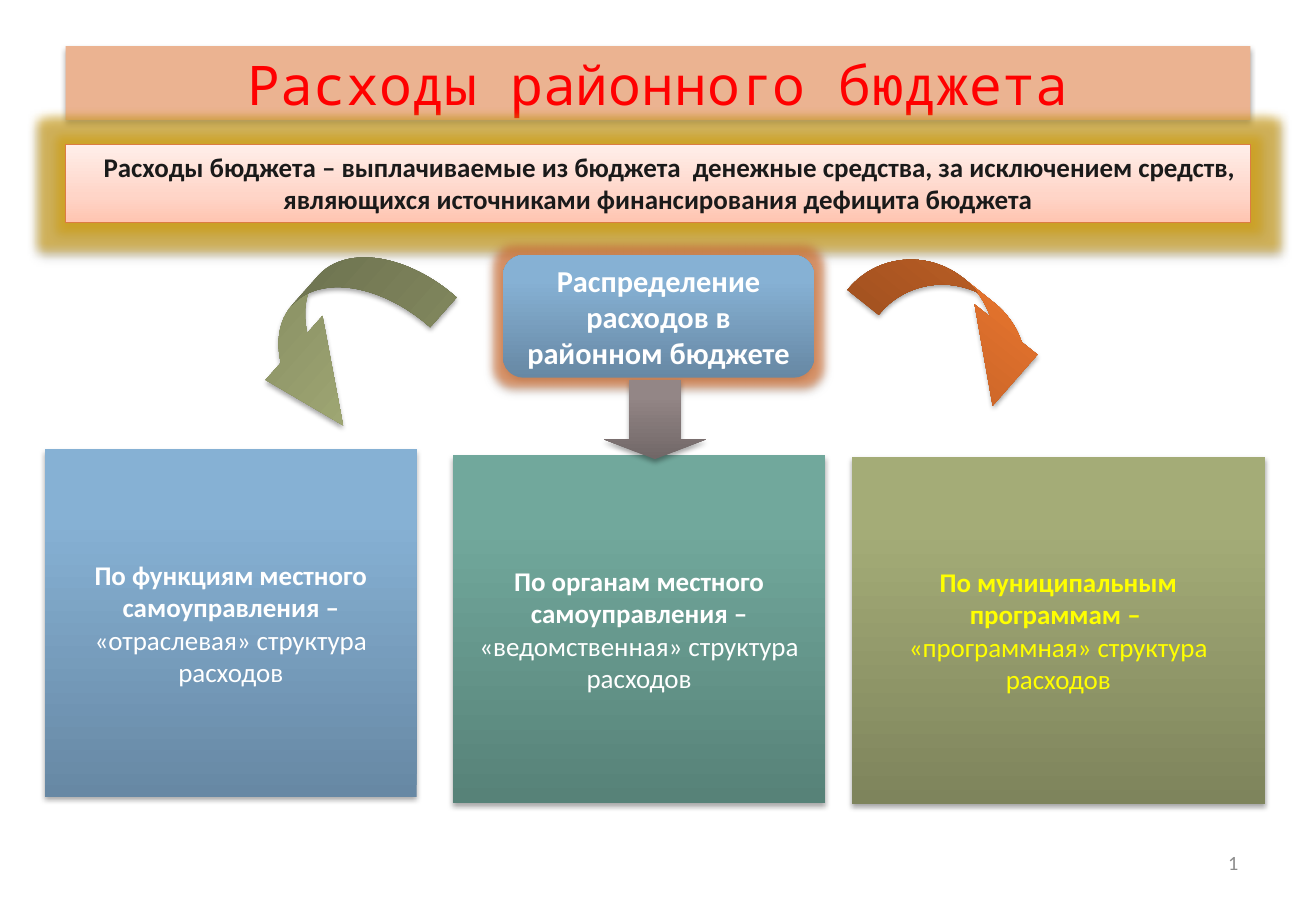
from lxml import etree
from pptx import Presentation
from pptx import util as u
from pptx.dml.color import RGBColor
from pptx.enum import shapes, text
from pptx.oxml.ns import qn

PX = 9144
KIND = shapes.MSO_SHAPE
ALIGN = text.PP_ALIGN
ANCHOR = text.MSO_ANCHOR
BLUE = [(0, "6788A4"), (80, "86B1D4"), (100, "86B2D7")]
TEAL = [(0, "578278"), (80, "71A89C"), (100, "70AA9D")]
OLIVE = [(0, "7E845C"), (80, "A4AC77"), (100, "A6AE76")]
ORANGE = [(0, "B65B24"), (80, "EC772F"), (100, "F1762C")]
GREY = [(0, "716767"), (80, "938686"), (100, "948787")]
PINK = [(0, "FFC5B1"), (35, "FFD5C8"), (100, "FFEFEA")]


def rgb(color):
    return RGBColor.from_string(color)


def child(parent, tag, **values):
    return etree.SubElement(parent, qn(tag), {k: str(v) for k, v in values.items()})


class BudgetSlide:
    """Draws shaded shapes and styled text on one slide."""

    def __init__(self, width, height):
        self.deck = Presentation()
        self.deck.slide_width = u.Emu(width * PX)
        self.deck.slide_height = u.Emu(height * PX)
        self.slide = self.deck.slides.add_slide(self.deck.slide_layouts[6])
        self.font = "Calibri"

    def shape(self, kind, box, fill, adjust=(), rotation=0, line=None, glow=None):
        item = self.slide.shapes.add_shape(kind, *[u.Emu(v * PX) for v in box])
        item.rotation = rotation
        for i, value in enumerate(adjust):
            item.adjustments[i] = value
        if line:
            item.line.color.rgb = rgb(line)
            item.line.width = u.Pt(0.75)
        else:
            item.line.fill.background()
        if isinstance(fill, str):
            item.fill.solid()
            item.fill.fore_color.rgb = rgb(fill)
        else:
            self.gradient(item, fill)
        self.effects(item, glow)
        return item

    def gradient(self, item, stops):
        geometry = item._element.spPr.find(qn("a:prstGeom"))
        grad = etree.Element(qn("a:gradFill"), rotWithShape="1")
        stop_list = child(grad, "a:gsLst")
        for position, color in stops:
            stop = child(stop_list, "a:gs", pos=position * 1000)
            child(stop, "a:srgbClr", val=color)
        child(grad, "a:lin", ang=16200000, scaled=0)
        geometry.addnext(grad)

    def effects(self, item, glow):
        item.shadow.inherit = False
        effects = item._element.spPr.find(qn("a:effectLst"))
        if glow:
            halo = child(effects, "a:glow", rad=u.Pt(11))
            child(child(halo, "a:srgbClr", val=glow), "a:alpha", val=60000)
        shadow = child(effects, "a:outerShdw", blurRad=u.Pt(3.1), dist=u.Pt(1.8),
                       dir=5400000, rotWithShape=0)
        child(child(shadow, "a:srgbClr", val="000000"), "a:alpha", val=35000)

    def add_text(self, item, paragraphs, size, color, align=ALIGN.CENTER,
                 anchor=ANCHOR.MIDDLE, inset=(10, 5), font=None, indent=0):
        frame = item.text_frame
        side, edge = (u.Emu(v * PX) for v in inset)
        layout = {"word_wrap": True, "vertical_anchor": anchor, "margin_left": side,
                  "margin_right": side, "margin_top": edge, "margin_bottom": edge}
        for name, value in layout.items():
            setattr(frame, name, value)
        for i, runs in enumerate(paragraphs):
            paragraph = frame.add_paragraph() if i else frame.paragraphs[0]
            paragraph.alignment = align
            if indent:
                paragraph._p.get_or_add_pPr().set("indent", str(indent * PX))
            for words, bold in runs:
                run = paragraph.add_run()
                run.text = words
                style = {"name": font or self.font, "size": u.Pt(size), "bold": bold}
                for name, value in style.items():
                    setattr(run.font, name, value)
                run.font.color.rgb = rgb(color)

    def label(self, box, words, size, color, align):
        item = self.slide.shapes.add_textbox(*[u.Emu(v * PX) for v in box])
        self.add_text(item, [[(words, False)]], size, color, align, ANCHOR.TOP)

    def save(self):
        self.deck.save("out.pptx")


def main():
    page = BudgetSlide(1083, 750)

    title = page.shape(KIND.RECTANGLE, (54, 38, 975, 61), "EBB391")
    page.add_text(title, [[("Расходы районного бюджета", False)]], 32.4, "FF0000",
                  font="Noto Sans Mono")

    definition = page.shape(KIND.RECTANGLE, (54, 119, 975, 64), PINK,
                            line="DC7C42", glow="D2A010")
    page.add_text(definition, [[("Расходы бюджета – выплачиваемые из бюджета  денежные средства, "
                                 "за исключением средств, являющихся источниками "
                                 "финансирования дефицита бюджета", True)]],
                  16, "1A1A1A", anchor=ANCHOR.TOP, indent=19)

    page.label((776, 695, 253, 40), "1", 12, "8C8C8C", ALIGN.RIGHT)

    distribution = page.shape(KIND.ROUNDED_RECTANGLE, (414, 210, 256, 101), BLUE,
                              adjust=[0.167], glow="DD6B25")
    page.add_text(distribution, [[("Распределение расходов в районном бюджете", True)]],
                  18, "FFFFFF", inset=(14, 5))

    cards = [
        ((37, 370, 306, 286), BLUE, "FFFFFF",
         [[("По функциям местного самоуправления – ", True),
           ("«отраслевая» структура расходов", False)]]),
        ((373, 375, 306, 286), TEAL, "FFFFFF",
         [[("По органам местного самоуправления – ", True),
           ("«ведомственная» структура расходов", False)]]),
        ((701, 376, 340, 286), OLIVE, "FFFF00",
         [[("По муниципальным программам – ", True)],
          [("«программная» структура расходов", False)]]),
    ]
    for box, fill, color, paragraphs in cards:
        card = page.shape(KIND.RECTANGLE, box, fill)
        page.add_text(card, paragraphs, 16, color, inset=(12, 0))

    arrows = [
        (KIND.CURVED_UP_ARROW, (193, 230, 176, 97), OLIVE, [0.338, 0.727, 0.747], 131.6),
        (KIND.CURVED_DOWN_ARROW, (698, 237, 186, 67), ORANGE, [0.492, 0.987, 0.834], 38.6),
        (KIND.DOWN_ARROW, (497, 313, 84, 65), GREY, [0.5, 0.25], 0),
    ]
    for arrow in arrows:
        page.shape(*arrow)

    page.save()


if __name__ == "__main__":
    main()
